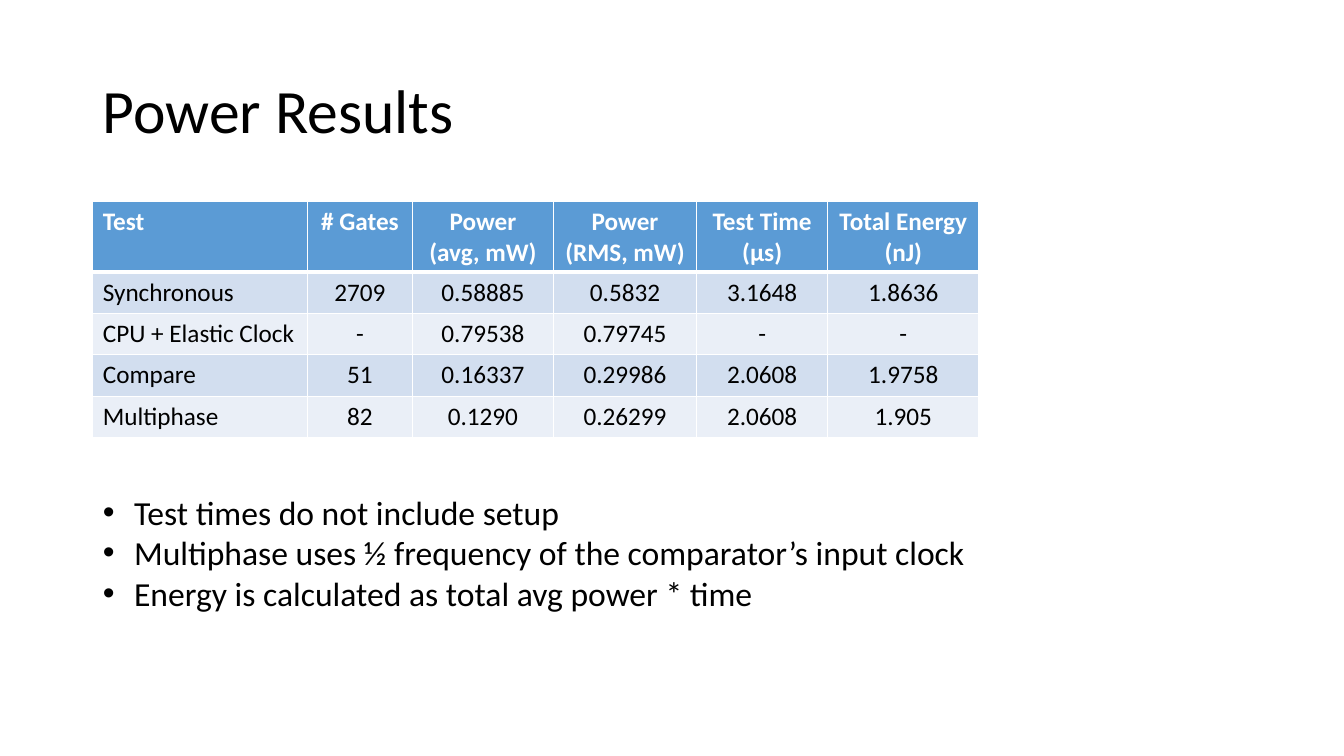
"""Build the Power Results slide."""
from dataclasses import dataclass

from lxml.etree import SubElement
from pptx import Presentation
from pptx.dml.color import RGBColor
from pptx.enum.text import MSO_ANCHOR, MSO_AUTO_SIZE, PP_ALIGN
from pptx.oxml.ns import qn
from pptx.util import Inches, Pt

FONT = "Calibri"
BLACK = RGBColor(0x00, 0x00, 0x00)
WHITE = RGBColor(0xFF, 0xFF, 0xFF)
HEADER_BLUE = RGBColor(0x5B, 0x9B, 0xD5)
BANDS = (RGBColor(0xD2, 0xDE, 0xEF), RGBColor(0xEA, 0xEF, 0xF7))
HEADER_HEIGHT, ROW_HEIGHT = 0.69, 0.41
THIN, THICK = 1, 3


@dataclass(frozen=True)
class Column:
    heading: str
    width: float
    values: tuple[str, ...]
    align: PP_ALIGN = PP_ALIGN.CENTER


COLUMNS = (
    Column("Test", 2.13, ("Synchronous", "CPU + Elastic Clock", "Compare", "Multiphase"), PP_ALIGN.LEFT),
    Column("# Gates", 1.04, ("2709", "-", "51", "82")),
    Column("Power (avg, mW)", 1.4, ("0.58885", "0.79538", "0.16337", "0.1290")),
    Column("Power (RMS, mW)", 1.42, ("0.5832", "0.79745", "0.29986", "0.26299")),
    Column("Test Time (µs)", 1.3, ("3.1648", "-", "2.0608", "2.0608")),
    Column("Total Energy (nJ)", 1.5, ("1.8636", "-", "1.9758", "1.905")),
)
NOTES = (
    "Test times do not include setup",
    "Multiphase uses ½ frequency of the comparator’s input clock",
    "Energy is calculated as total avg power * time",
)


def add_run(p, text: str, size: float, color: RGBColor = BLACK, bold: bool = False) -> None:
    r = p.add_run()
    r.text = text
    r.font.name = FONT
    r.font.size = Pt(size)
    r.font.bold = bold
    r.font.color.rgb = color


def place(sp, left: float, top: float, width: float, height: float) -> None:
    sp.left, sp.top = Inches(left), Inches(top)
    sp.width, sp.height = Inches(width), Inches(height)


def set_borders(cell, top: float, bottom: float) -> None:
    tcPr = cell._tc.get_or_add_tcPr()
    sides = (("lnL", THIN), ("lnR", THIN), ("lnT", top), ("lnB", bottom))
    for i, (side, width) in enumerate(sides):
        ln = SubElement(tcPr, qn(f"a:{side}"), w=str(Pt(width)))
        fill = SubElement(ln, qn("a:solidFill"))
        SubElement(fill, qn("a:srgbClr"), val=str(WHITE))
        tcPr.insert(i, ln)


def fill_cell(cell, text: str, row: int, align: PP_ALIGN) -> None:
    header = row == 0
    cell.fill.solid()
    cell.fill.fore_color.rgb = HEADER_BLUE if header else BANDS[(row - 1) % 2]
    set_borders(cell, THICK if row == 1 else THIN, THICK if header else THIN)
    p = cell.text_frame.paragraphs[0]
    p.alignment = align
    add_run(p, text, 18, WHITE if header else BLACK, header)


def add_results(slide) -> None:
    n_rows = len(COLUMNS[0].values) + 1
    width = sum(col.width for col in COLUMNS)
    height = HEADER_HEIGHT + ROW_HEIGHT * (n_rows - 1)
    table = slide.shapes.add_table(
        n_rows, len(COLUMNS), Inches(0.92), Inches(2), Inches(width), Inches(height)
    ).table
    for i, row in enumerate(table.rows):
        row.height = Inches(ROW_HEIGHT if i else HEADER_HEIGHT)
    for j, col in enumerate(COLUMNS):
        table.columns[j].width = Inches(col.width)
        for i, text in enumerate((col.heading, *col.values)):
            fill_cell(table.cell(i, j), text, i, col.align)


def add_title(slide) -> None:
    sp = slide.shapes.title
    place(sp, 0.92, 0.4, 11.5, 1.45)
    tf = sp.text_frame
    tf.vertical_anchor = MSO_ANCHOR.MIDDLE
    p = tf.paragraphs[0]
    p.alignment = PP_ALIGN.LEFT
    p.line_spacing = 0.9
    add_run(p, "Power Results", 44)


def add_notes(slide) -> None:
    sp = slide.placeholders[1]
    place(sp, 0.92, 4.83, 8.96, 1.31)
    tf = sp.text_frame
    tf.word_wrap = False
    tf.auto_size = MSO_AUTO_SIZE.SHAPE_TO_FIT_TEXT
    for i, text in enumerate(NOTES):
        p = tf.add_paragraph() if i else tf.paragraphs[0]
        p.space_before = Pt(0)
        pPr = p._p.get_or_add_pPr()
        pPr.set("marL", str(Inches(0.31)))
        pPr.set("indent", str(Inches(-0.31)))
        SubElement(pPr, qn("a:buChar"), char="•")
        add_run(p, text, 24)


def main() -> None:
    prs = Presentation()
    prs.slide_width, prs.slide_height = Inches(13.33), Inches(7.5)
    slide = prs.slides.add_slide(prs.slide_layouts[1])
    add_title(slide)
    add_results(slide)
    add_notes(slide)
    prs.save("out.pptx")


if __name__ == "__main__":
    main()
